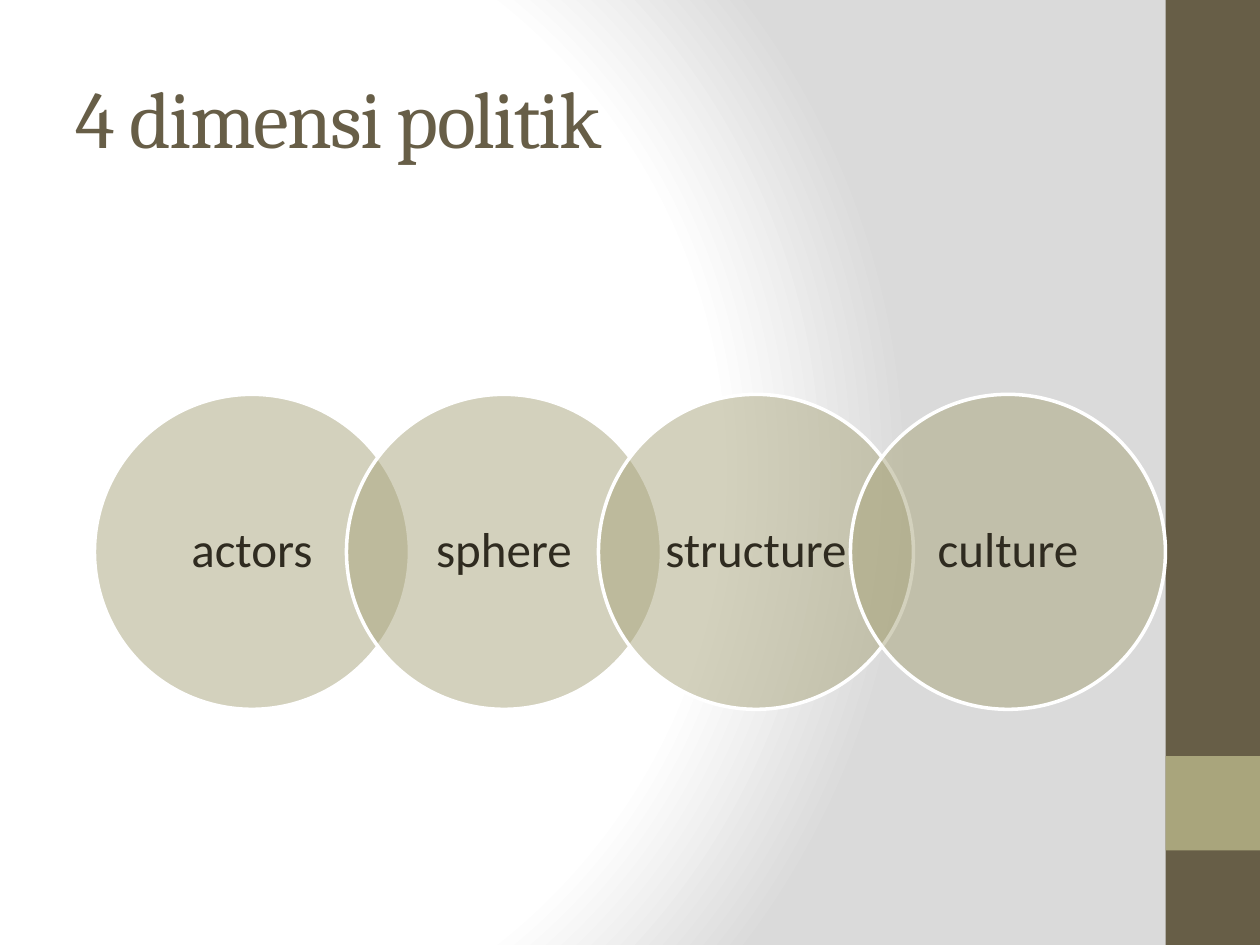
from dataclasses import dataclass
from typing import Any

from lxml import etree
from pptx import Presentation
from pptx import util as u
from pptx.dml.color import RGBColor
from pptx.enum import shapes, text
from pptx.oxml.ns import qn

BROWN = RGBColor(0x67, 0x5E, 0x47)
OLIVE = RGBColor(0xA9, 0xA5, 0x7C)
INK = RGBColor(0x2F, 0x2B, 0x20)
WHITE = RGBColor(0xFF, 0xFF, 0xFF)
GREY = RGBColor(0xDA, 0xDA, 0xDA)

DIAMETER = 2.5
STEP = 2.0
FIRST_LEFT = 0.75
CIRCLE_TOP = 3.13


@dataclass(frozen=True)
class Band:
    top: float
    height: float
    color: RGBColor


@dataclass(frozen=True)
class Dimension:
    label: str
    left: float


BANDS = [Band(0, 7.5, BROWN), Band(6, 0.75, OLIVE)]
DIMENSIONS = [
    Dimension(label, FIRST_LEFT + index * STEP)
    for index, label in enumerate(["actors", "sphere", "structure", "culture"])
]


def apply(target: Any, values: dict[str, Any]) -> None:
    for name, value in values.items():
        setattr(target, name, value)


def write(frame: Any, words: str, font: dict[str, Any], color: RGBColor) -> Any:
    para = frame.paragraphs[0]
    span = para.add_run()
    span.text = words
    apply(span.font, font)
    span.font.color.rgb = color
    return para


def paint_background(page: Any) -> None:
    page.background.fill.gradient()
    gradient = page.element.find(".//" + qn("a:gradFill"))
    for child in list(gradient):
        gradient.remove(child)
    stops = etree.SubElement(gradient, qn("a:gsLst"))
    for position, color in [(0, WHITE), (75, WHITE), (100, GREY)]:
        stop = etree.SubElement(stops, qn("a:gs"), pos=str(position * 1000))
        etree.SubElement(stop, qn("a:srgbClr"), val=str(color))
    circle = etree.SubElement(gradient, qn("a:path"), path="circle")
    etree.SubElement(
        circle, qn("a:fillToRect"), l="20000", t="50000", r="100000", b="50000"
    )


def draw_shape(
    page: Any, kind: Any, box: tuple[float, float, float, float], color: RGBColor
) -> Any:
    shape = page.shapes.add_shape(kind, *map(u.Inches, box))
    shape.shadow.inherit = False
    shape.fill.solid()
    shape.fill.fore_color.rgb = color
    return shape


def draw_band(page: Any, band: Band) -> None:
    box = (9.25, band.top, 0.75, band.height)
    shape = draw_shape(page, shapes.MSO_SHAPE.RECTANGLE, box, band.color)
    shape.line.fill.background()


def draw_dimension(page: Any, dimension: Dimension) -> None:
    box = (dimension.left, CIRCLE_TOP, DIAMETER, DIAMETER)
    circle = draw_shape(page, shapes.MSO_SHAPE.OVAL, box, OLIVE)
    tint = circle.element.spPr.find(qn("a:solidFill")).find(qn("a:srgbClr"))
    etree.SubElement(tint, qn("a:alpha"), val="50000")
    circle.line.color.rgb = WHITE
    circle.line.width = u.Pt(2)
    apply(circle.text_frame, {
        "word_wrap": True,
        "vertical_anchor": text.MSO_ANCHOR.MIDDLE,
        "margin_left": u.Inches(0.14),
        "margin_right": u.Inches(0.14),
        "margin_top": u.Inches(0.04),
        "margin_bottom": u.Inches(0.04),
    })
    font = {"name": "Calibri", "size": u.Pt(28)}
    para = write(circle.text_frame, dimension.label, font, INK)
    apply(para, {"alignment": text.PP_ALIGN.CENTER, "line_spacing": 0.9})


def place_title(page: Any) -> None:
    title = page.shapes.title
    apply(title, {
        "left": u.Inches(0.5),
        "top": u.Inches(0.3),
        "width": u.Inches(8.33),
        "height": u.Inches(1.25),
    })
    title.text_frame.vertical_anchor = text.MSO_ANCHOR.MIDDLE
    font = {"name": "Cambria", "size": u.Pt(46)}
    para = write(title.text_frame, "4 dimensi politik", font, BROWN)
    para.alignment = text.PP_ALIGN.LEFT
    para.runs[0].font._element.set("spc", "-100")


def main() -> None:
    deck = Presentation()
    apply(deck, {"slide_width": u.Inches(10), "slide_height": u.Inches(7.5)})
    page = deck.slides.add_slide(deck.slide_layouts[5])
    paint_background(page)
    for band in BANDS:
        draw_band(page, band)
    place_title(page)
    for dimension in DIMENSIONS:
        draw_dimension(page, dimension)
    deck.save("out.pptx")


if __name__ == "__main__":
    main()
